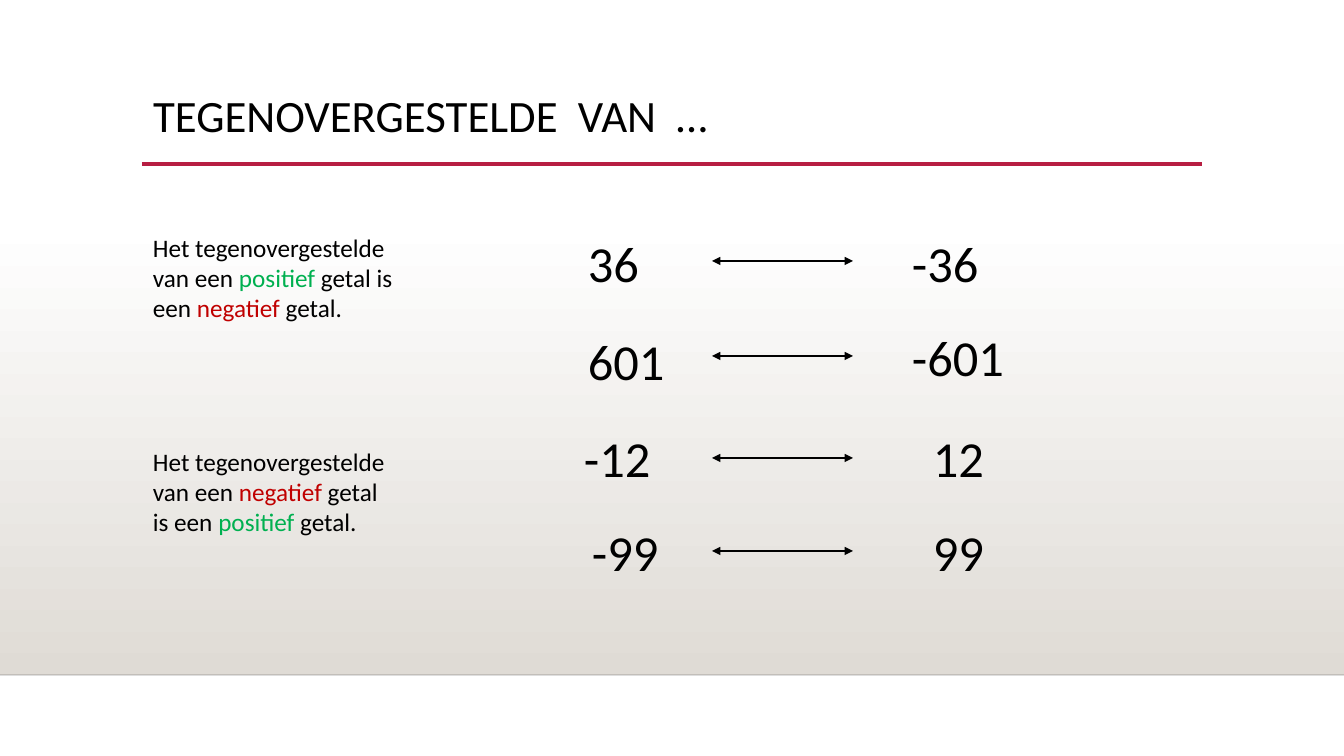
from lxml.etree import SubElement
from pptx import Presentation
from pptx.dml.color import RGBColor
from pptx.enum.shapes import MSO_CONNECTOR as Connector, MSO_SHAPE as Shape
from pptx.enum.text import MSO_ANCHOR as Anchor, PP_ALIGN as Align
from pptx.oxml.ns import qn
from pptx.util import Emu, Pt

EMU_PER_PX = 12192000 / 1344
BLACK, GREEN, RED, ACCENT = "000000", "00B050", "C00000", "B71E42"
WHITE, SAND = "FFFFFF", "DFDBD5"


def px(length):
    return Emu(round(length * EMU_PER_PX))


def colour(hex_code):
    return RGBColor.from_string(hex_code)


class SlideBuilder:
    font = "Calibri"

    def __init__(self, slide):
        self.slide = slide

    def add_run(self, paragraph, text, size, hex_code=BLACK):
        run = paragraph.add_run()
        run.text = text
        run.font.name = self.font
        run.font.size = Pt(size)
        run.font.color.rgb = colour(hex_code)

    def title(self, text, left, top, width, height, size):
        heading = self.slide.shapes.title
        heading.left, heading.top = px(left), px(top)
        heading.width, heading.height = px(width), px(height)
        frame = heading.text_frame
        frame.word_wrap = True
        frame.vertical_anchor = Anchor.TOP
        paragraph = frame.paragraphs[0]
        paragraph.alignment = Align.LEFT
        paragraph.line_spacing = 0.9
        self.add_run(paragraph, text, size)

    def text(self, paragraphs, left, top, width, height, size, gap=0):
        box = self.slide.shapes.add_textbox(px(left), px(top), px(width), px(height))
        frame = box.text_frame
        frame.word_wrap = True
        for index, runs in enumerate(paragraphs):
            paragraph = frame.add_paragraph() if index else frame.paragraphs[0]
            if index:
                paragraph.space_before = Pt(gap)
            for words, hex_code in runs:
                self.add_run(paragraph, words, size, hex_code)

    def gradient(self, left, top, width, height, start, end):
        panel = self.slide.shapes.add_shape(
            Shape.RECTANGLE, px(left), px(top), px(width), px(height))
        panel.shadow.inherit = False
        panel.line.fill.background()
        panel.fill.gradient()
        panel.fill.gradient_angle = 270
        for stop, position, hex_code in zip(panel.fill.gradient_stops, (0, 1), (start, end)):
            stop.position = position
            stop.color.rgb = colour(hex_code)

    def line(self, left, right, y, weight, hex_code=BLACK, opacity=100, arrows=False):
        rule = self.slide.shapes.add_connector(
            Connector.STRAIGHT, px(left), px(y), px(right), px(y))
        rule.line.width = Pt(weight)
        rule.line.color.rgb = colour(hex_code)
        properties = rule._element.spPr
        SubElement(properties, qn("a:effectLst"))
        if opacity < 100:
            tint = properties.find(".//" + qn("a:srgbClr"))
            SubElement(tint, qn("a:alpha"), val=str(opacity * 1000))
        if arrows:
            for end in ("a:headEnd", "a:tailEnd"):
                SubElement(properties.find(qn("a:ln")), qn(end), type="triangle")


def main():
    deck = Presentation()
    deck.slide_width, deck.slide_height = px(1344), px(756)
    builder = SlideBuilder(deck.slides.add_slide(deck.slide_layouts[5]))

    # Background and rules
    builder.gradient(0, 223, 1344, 452, WHITE, SAND)
    builder.line(0, 1344, 675, 1, opacity=20)
    builder.line(142, 1202, 164, 2.5, ACCENT)

    # Title
    builder.title("TEGENOVERGESTELDE  VAN  …", 143, 89, 1058, 116, 32)

    # Explanation of both cases
    positive, negative = ("positief", GREEN), ("negatief", RED)
    explanation = [
        [("Het tegenovergestelde van een ", BLACK), source,
         (" getal is een ", BLACK), opposite, (" getal.", BLACK)]
        for source, opposite in ((positive, negative), (negative, positive))
    ]
    builder.text(explanation, 143, 227, 261, 316, 18, gap=88)

    # Numbers and their opposites: (text, left, top) on each side of an arrow
    opposites = [
        (("36", 578, 227), 261, ("-36", 902, 227)),
        (("601", 578, 325), 356, ("-601", 902, 321)),
        (("-12", 574, 422), 458, ("12", 923, 422)),
        (("-99", 582, 516), 551, ("99", 923, 516)),
    ]
    for number, arrow_y, opposite in opposites:
        for digits, left, top in (number, opposite):
            builder.text([[(digits, BLACK)]], left, top, 133, 72, 36)
        builder.line(712, 853, arrow_y, 1.25, arrows=True)

    deck.save("out.pptx")


if __name__ == "__main__":
    main()
